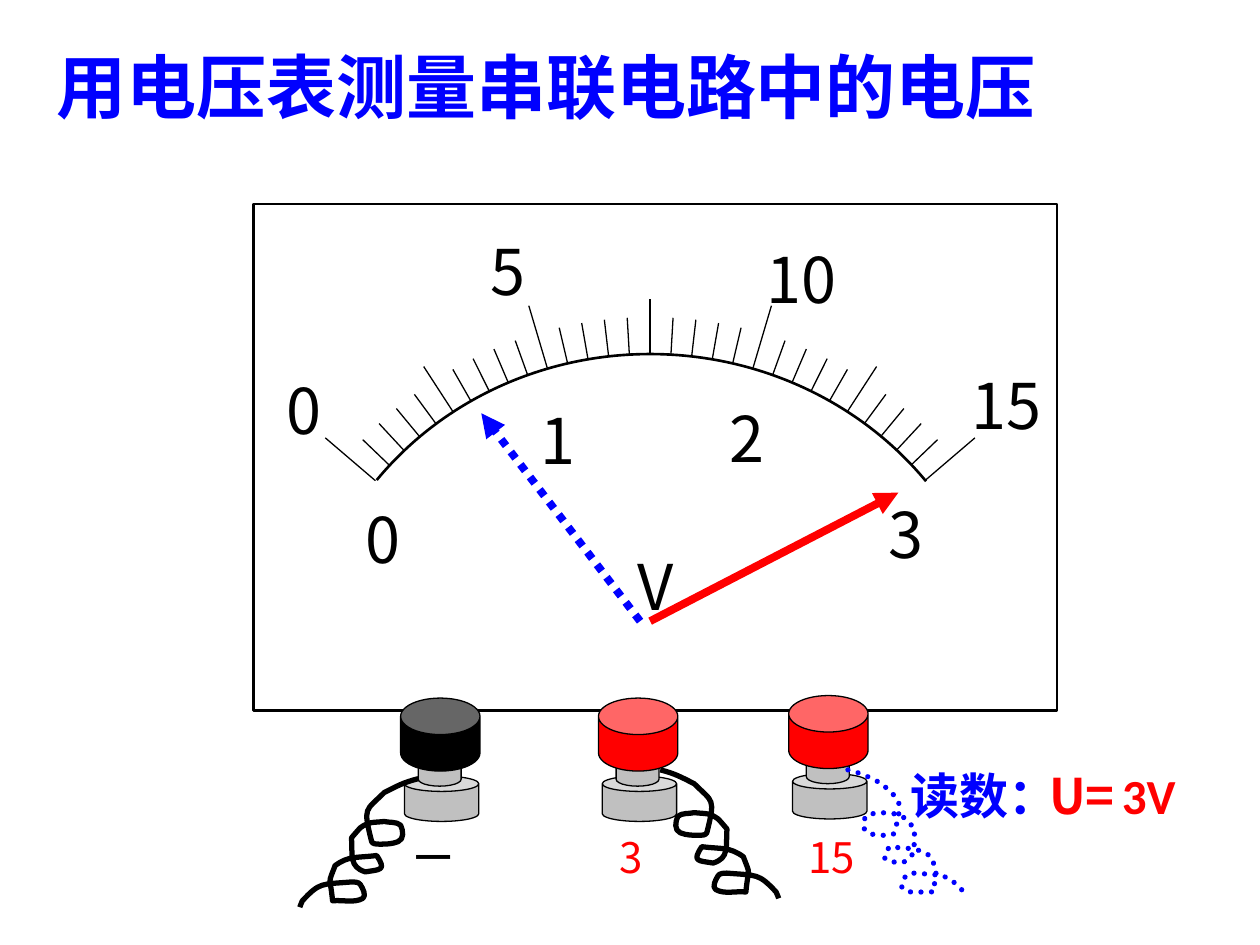
from collections import namedtuple
from copy import deepcopy
from math import cos, radians, sin

from lxml.etree import SubElement
from pptx import Presentation
from pptx.dml.color import RGBColor
from pptx.enum.dml import MSO_LINE
from pptx.enum.lang import MSO_LANGUAGE_ID
from pptx.enum.shapes import MSO_CONNECTOR, MSO_SHAPE
from pptx.enum.text import MSO_ANCHOR, PP_ALIGN
from pptx.oxml.ns import qn
from pptx.util import Inches, Pt

COLUMNS, ROWS = 100, 75
CELL = Inches(0.1)
NOTO = "Noto Sans CJK SC"
BLACK, BLUE, RED, GREY, WHITE = "000000", "0000FF", "FF0000", "C0C0C0", "FFFFFF"

Box = namedtuple("Box", "x y w h")

DIAL_CURVE = [(9.8, 21.9), (15.1, 15.5), (23.1, 11.9), (31.5, 11.9),
              (40, 11.9), (48.1, 15.6), (53.4, 22)]
WIRE_CURVE = [
    (0, 0), (1.2, 0.3), (1.7, 0.6), (2.7, 1.1), (4.2, 2.6), (4.4, 2.2), (3.7, 5),
    (3.6, 5.2), (3.3, 5.2), (3.1, 5.2), (2.6, 5.2), (2.1, 5.2), (1.6, 5),
    (1.1, 4.8), (1.2, 4.1), (1.4, 3.7), (1.7, 3.4), (2.3, 3.5), (2.7, 3.4),
    (3.7, 3.5), (3.9, 3.4), (4.6, 3.9), (4.8, 4.1), (5.3, 4.7), (5.3, 4.7),
    (5.2, 6.1), (5.5, 7), (4.2, 7.4), (3, 7.2), (2.5, 7.3), (3.3, 6.1),
    (4.9, 6.3), (5.5, 6.1), (6.6, 6.9), (7.2, 8.5), (7, 7.6), (6.8, 9.7),
    (6, 9.6), (5.1, 9.9), (4.4, 9.5), (4.1, 9.3), (4.4, 8.7), (4.6, 8.4),
    (4.7, 8.2), (5.1, 8.2), (5.3, 8.2), (7.7, 8.4), (7.8, 8.2), (9.2, 9.7),
    (9.3, 9.9), (9.4, 10.2), (9.4, 10.2),
]


def cells(*values):
    return [round(value * CELL) for value in values]


def color(hex_string):
    return RGBColor.from_string(hex_string)


def set_line(line, ink, width, dash=None):
    line.color.rgb = color(ink)
    line.width = Pt(width)
    if dash:
        line.dash_style = dash


def write(paragraph, text, size=24, font=NOTO, ink=BLACK, bold=False):
    run = paragraph.add_run()
    run.text = text
    run.font.name, run.font.size, run.font.bold = font, Pt(size), bold
    run.font.color.rgb = color(ink)
    run.font.language_id = MSO_LANGUAGE_ID.SIMPLIFIED_CHINESE


def add_label(shapes, box, text, side_inset=True, wrap=True, align=PP_ALIGN.LEFT, **style):
    frame = shapes.add_textbox(*cells(*box)).text_frame
    frame.word_wrap = wrap
    if not side_inset:
        frame.margin_left = frame.margin_right = 0
    paragraph = frame.paragraphs[0]
    paragraph.alignment = align
    write(paragraph, text, **style)
    return paragraph


def add_preset(shapes, preset, box, fill, width=0.75, bend=None):
    shape = shapes.add_shape(preset, *cells(*box))
    shape.shadow.inherit = False
    shape.fill.solid()
    shape.fill.fore_color.rgb = color(fill)
    set_line(shape.line, BLACK, width)
    if bend:
        shape.adjustments[0] = bend


def add_stroke(shapes, start, end, ink=BLACK, width=0.75, dash=None, arrow=False):
    stroke = shapes.add_connector(MSO_CONNECTOR.STRAIGHT, *cells(*start, *end))
    set_line(stroke.line, ink, width, dash)
    outline = stroke.line._get_or_add_ln()
    SubElement(outline.getparent(), qn("a:effectLst"))
    if arrow:
        SubElement(outline, qn("a:tailEnd"), type="triangle")


def add_curve(shapes, points, ink, width, dash=None, apex=None):
    corners = points + [apex] if apex else points
    first, *rest = [cells(*point) for point in corners]
    builder = shapes.build_freeform(*first)
    builder.add_line_segments(rest, close=False)
    curve = builder.convert_to_shape()
    curve.shadow.inherit = False
    curve.fill.background()
    set_line(curve.line, ink, width, dash)
    if dash:
        curve.line._get_or_add_ln().set("cap", "rnd")

    outline = next(curve._element.iter(qn("a:path")))
    segments = outline.findall(qn("a:lnTo"))
    for index in range(0, len(points) - 1, 3):
        bezier = outline.makeelement(qn("a:cubicBezTo"))
        segments[index].addprevious(bezier)
        for segment in segments[index:index + 3]:
            bezier.append(segment[0])
            outline.remove(segment)
    if apex:
        sector = deepcopy(outline)
        sector.set("stroke", "0")
        SubElement(sector, qn("a:close"))
        outline.addnext(sector)
        outline.remove(segments[-1])


def add_title(slide, box, text):
    title = slide.shapes.title
    title.left, title.top, title.width, title.height = cells(*box)
    frame = title.text_frame
    frame.vertical_anchor = MSO_ANCHOR.MIDDLE
    frame.word_wrap = True
    frame.paragraphs[0].alignment = PP_ALIGN.LEFT
    write(frame.paragraphs[0], text, size=40, font="Arial", ink=BLUE, bold=True)


def add_dial(shapes, box):
    add_preset(shapes, MSO_SHAPE.RECTANGLE, box, WHITE, width=1.5)
    center_x, center_y = box.x + 31.5, box.y + 40.57
    radius, sweep, divisions = 28.67, 49.5, 30

    def polar(distance, share):
        angle = radians((2 * share - 1) * sweep)
        return center_x + distance * sin(angle), center_y - distance * cos(angle)

    for tick in range(divisions + 1):
        outer = 33.9 if tick % 10 == 0 else 33 if tick % 5 == 0 else 31.6
        share = tick / divisions
        add_stroke(shapes, polar(outer, share), polar(radius, share))
    add_curve(shapes, [(box.x + x, box.y + y) for x, y in DIAL_CURVE], BLACK, 1.5,
              apex=(box.x + 31.5, box.y + 38.8))

    scale_marks = [
        ("V", 31.9, 26.8), ("5", 20.2, 1.8), ("0", 4, 12.8), ("3", 51.8, 22.6),
        ("2", 39.2, 15), ("1", 24.2, 15.2), ("0", 10.3, 23), ("10", 43.5, 2.4),
        ("15", 59.8, 12.4),
    ]
    for mark, middle, y in scale_marks:
        width = 4 if len(mark) == 1 else 6
        add_label(shapes, (box.x + middle - width / 2, box.y + y, width, 5.4), mark,
                  side_inset=False, wrap=False, align=PP_ALIGN.CENTER, size=36)


def add_pointers(shapes, box):
    pivot_y = box.y + 33.1
    add_stroke(shapes, (box.x + 31.5, pivot_y), (box.x + 51.2, box.y + 22.9),
               RED, 4.5, arrow=True)
    add_stroke(shapes, (box.x + 30.7, pivot_y), (box.x + 18.1, box.y + 16.6),
               BLUE, 4.5, MSO_LINE.ROUND_DOT, arrow=True)


def add_terminal(shapes, box, cap, mark, mark_offset, mark_ink, bold=False):
    parts = [(0.3, 6.2, 5.9, 3.6, GREY, 0.339), (1.4, 3.7, 3.4, 3.3, GREY, 0.333),
             (0, 0, 6.3, 5.8, cap, 0.5)]
    for x, y, w, h, fill, bend in parts:
        add_preset(shapes, MSO_SHAPE.CAN, (box.x + x, box.y + y, w, h), fill, bend=bend)
    x, y = mark_offset
    add_label(shapes, (box.x + x, box.y + box.h + y, 8, 9), mark, ink=mark_ink, bold=bold)


def add_wire(shapes, x, y, ink=BLACK, direction=1, dash=None):
    points = [(x + direction * dx, y + dy) for dx, dy in WIRE_CURVE]
    add_curve(shapes, points, ink, 3, dash)


def add_reading(shapes, box):
    add_label(shapes, (box.x, box.y, 13.4, box.h), "读数：", size=28, font="Calibri",
              ink=BLUE, bold=True)
    value = add_label(shapes, (box.x + 11, box.y, 20.1, box.h), "U=", size=28,
                      ink=RED, bold=True)
    write(value, " ", size=18, font="Calibri", bold=True)
    write(value, "3V", size=28, font="Calibri", ink=RED, bold=True)


def main():
    deck = Presentation()
    deck.slide_width, deck.slide_height = cells(COLUMNS, ROWS)
    slide = deck.slides.add_slide(deck.slide_layouts[5])
    shapes = slide.shapes
    meter = Box(20.1, 16.2, 63.8, 40.2)

    add_title(slide, Box(3.5, 2.9, 85.5, 7.7), "用电压表测量串联电路中的电压")
    add_dial(shapes.add_group_shape().shapes, meter)
    terminals = shapes.add_group_shape().shapes
    add_terminal(terminals, Box(47.5, 55.4, 6.3, 9.8), RED, "3", (0.7, 0.3), RED)
    add_terminal(terminals, Box(62.6, 55.2, 6.3, 9.8), RED, "15", (0.6, 0.5), RED)
    add_terminal(terminals, Box(31.8, 55.4, 6.3, 9.8), BLACK, "—", (0.1, 0), BLACK, True)
    add_wire(shapes, 33.2, 61.8, direction=-1)
    add_wire(shapes, 52.4, 61.1)
    add_pointers(shapes, meter)
    add_wire(shapes, 67.3, 61.1, ink=BLUE, dash=MSO_LINE.ROUND_DOT)
    add_reading(shapes, Box(71.3, 60.3, 31.1, 5.7))
    deck.save("out.pptx")


if __name__ == "__main__":
    main()
